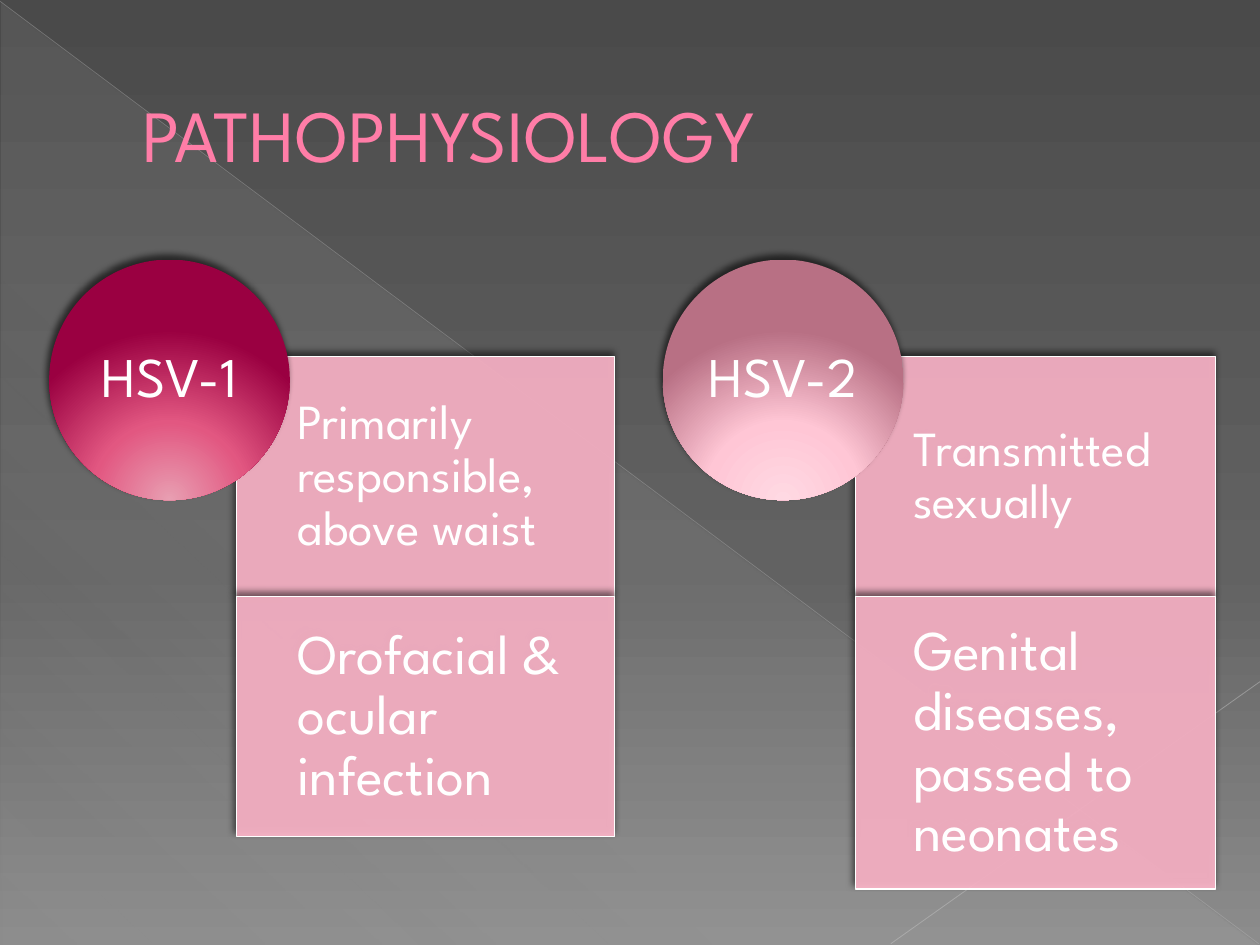
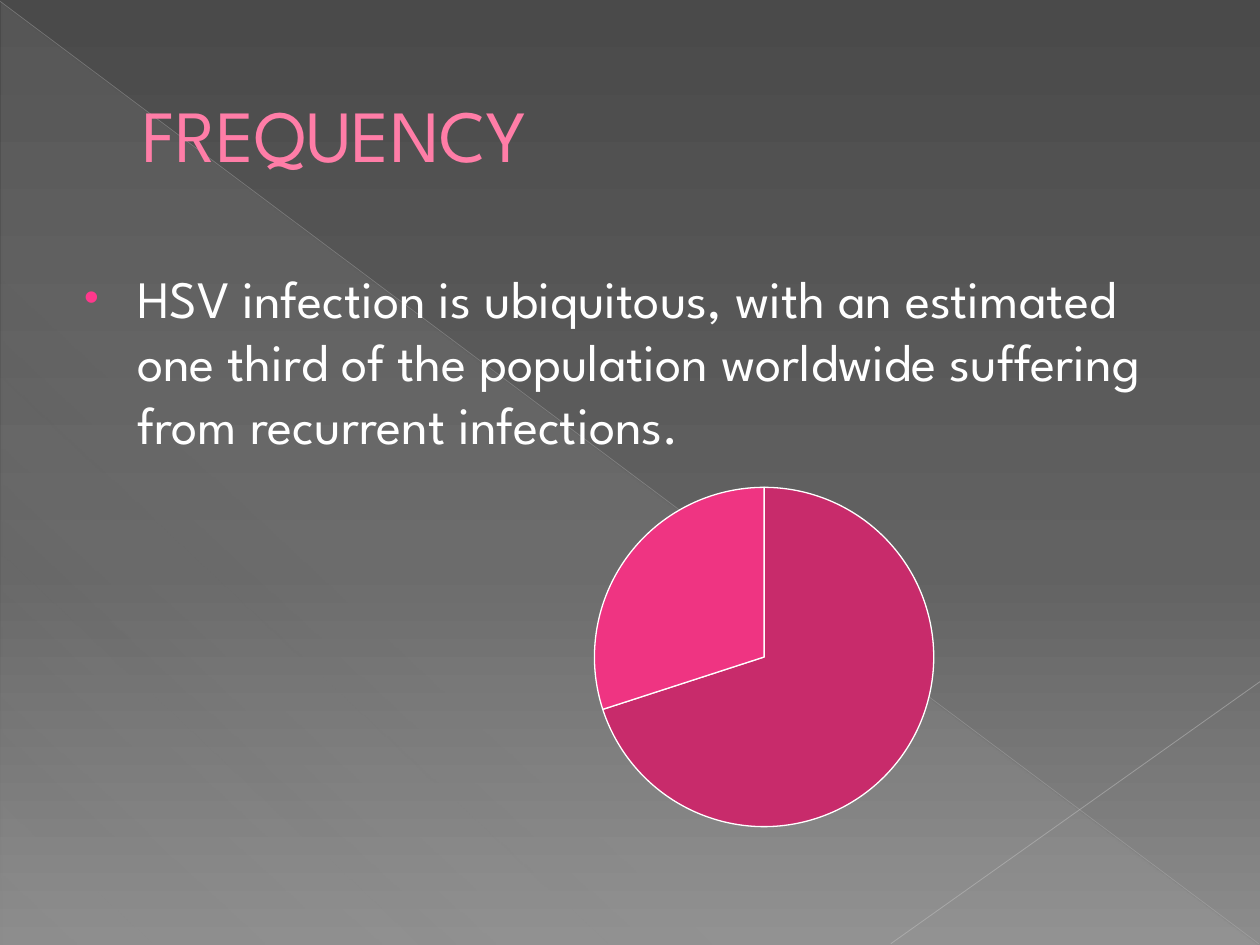
from dataclasses import dataclass

from lxml import etree
from pptx import Presentation
from pptx.chart.data import CategoryChartData
from pptx.dml.color import RGBColor
from pptx.enum.chart import XL_CHART_TYPE
from pptx.enum.shapes import MSO_CONNECTOR, MSO_SHAPE
from pptx.enum.text import MSO_ANCHOR, PP_ALIGN
from pptx.oxml import parse_xml
from pptx.oxml.ns import nsdecls, qn
from pptx.util import Inches, Pt

PIE = XL_CHART_TYPE.PIE
STRAIGHT = MSO_CONNECTOR.STRAIGHT
RECT, OVAL, TRIANGLE = MSO_SHAPE.RECTANGLE, MSO_SHAPE.OVAL, MSO_SHAPE.RIGHT_TRIANGLE
TOP, MIDDLE = MSO_ANCHOR.TOP, MSO_ANCHOR.MIDDLE
LEFT, CENTER = PP_ALIGN.LEFT, PP_ALIGN.CENTER

COLS, ROWS = 100, 75
CELL = Inches(0.1)
BOX_TOP, BOX_H = 28.3, 19.05
CIRCLE_TOP, CIRCLE = 20.6, 19.1


@dataclass(frozen=True)
class Theme:
    """Colours, font and type sizes of the deck."""
    font: str = "League Spartan"
    title: str = "FF7DA7"
    title_edge: str = "B12761"
    text: str = "FFFFFF"
    bullet: str = "FF388C"
    box: str = "FFB7CB"
    backdrop: tuple = ((0, "4A4A4A", 100), (60, "626262", 100), (100, "8C8C8C", 100))
    sheen: tuple = ((0, "D2D2D2", 10), (70, "D2D2D2", 8), (100, "D2D2D2", 1))
    crimson: tuple = ((0, "E89FB2", 100), (46, "E25781", 100), (100, "9A0041", 100))
    blush: tuple = ((0, "FFD9E3", 100), (46, "FFC6D5", 100), (100, "B87084", 100))
    slices: tuple = ("C82B6B", "EF3482")
    title_size: int = 42
    large: int = 32
    body: int = 30
    small: int = 28
    chart: int = 18


T = Theme()


def grid(*cells):
    """Turn grid cells into lengths."""
    return [round(c * CELL) for c in cells]


def rgb(value):
    """Return a colour from its hex value."""
    return RGBColor.from_string(value)


def set_alpha(solid, percent):
    """Make a solid fill element partly transparent."""
    etree.SubElement(solid[0], qn("a:alpha"), val=str(percent * 1000))


def set_gradient(solid, stops, angle=None):
    """Replace a solid fill by a linear gradient, or a radial one without angle."""
    gs = "".join(
        f'<a:gs pos="{pos * 1000}"><a:srgbClr val="{color}">'
        f'<a:alpha val="{alpha * 1000}"/></a:srgbClr></a:gs>'
        for pos, color, alpha in stops)
    if angle is None:
        way = ('<a:path path="circle"><a:fillToRect l="50000" t="155000" '
               'r="50000" b="-55000"/></a:path>')
    else:
        way = f'<a:lin ang="{angle * 60000}" scaled="0"/>'
    fill = parse_xml(f'<a:gradFill {nsdecls("a")} rotWithShape="1">'
                     f'<a:gsLst>{gs}</a:gsLst>{way}</a:gradFill>')
    solid.getparent().replace(solid, fill)


def add_shadow(sp):
    """Give a shape the soft shadow of the panels."""
    sp.shadow.inherit = False
    effects = sp._element.spPr.find(qn("a:effectLst"))
    effects.append(parse_xml(
        f'<a:outerShdw {nsdecls("a")} blurRad="{Pt(4)}" dist="{Pt(3)}" '
        f'dir="{245 * 60000}" rotWithShape="0"><a:srgbClr val="000000">'
        '<a:alpha val="60000"/></a:srgbClr></a:outerShdw>'))


def write(sp, text, size, color=T.text, align=LEFT, anchor=MIDDLE,
          spacing=None, after=None, insets=None):
    """Write one formatted paragraph and return it."""
    tf = sp.text_frame
    tf.word_wrap = True
    tf.vertical_anchor = anchor
    if insets:
        tf.margin_left, tf.margin_top, tf.margin_right, tf.margin_bottom = grid(*insets)
    p = tf.paragraphs[0]
    p.alignment, p.line_spacing, p.space_after = align, spacing, after
    r = p.add_run()
    r.text = text
    r.font.name, r.font.size, r.font.color.rgb = T.font, Pt(size), rgb(color)
    return p


def add_shape(s, kind, *cells):
    """Add a plain shape without line or shadow; return it and its fill element."""
    sp = s.shapes.add_shape(kind, *grid(*cells))
    sp.fill.solid()
    sp.fill.fore_color.rgb = rgb(T.box)
    sp.line.fill.background()
    sp.shadow.inherit = False
    return sp, sp._element.spPr.find(qn("a:solidFill"))


def add_line(s, ends, color, width, alpha):
    """Add a thin translucent line."""
    cx = s.shapes.add_connector(STRAIGHT, *grid(*ends))
    cx.line.color.rgb = rgb(color)
    cx.line.width = Pt(width)
    spPr = cx._element.spPr
    set_alpha(spPr.find(qn("a:ln")).find(qn("a:solidFill")), alpha)
    etree.SubElement(spPr, qn("a:effectLst"))
    return cx


def decorate(prs, s):
    """Put the backdrop, sheen and lines on the master, drawing them through a slide."""
    master = prs.slide_master
    master.background.fill.solid()
    master.background.fill.fore_color.rgb = rgb(T.backdrop[0][1])
    set_gradient(master.element.xpath(".//p:bgPr/a:solidFill")[0], T.backdrop, 90)
    sheen, fill = add_shape(s, TRIANGLE, 0.1, 0.2, COLS - 0.2, ROWS - 0.2)
    set_gradient(fill, T.sheen, 133)
    lines = [add_line(s, (0, 0.1, COLS - 0.1, ROWS - 0.1), "BFBFBF", 0.39, 35),
             add_line(s, (COLS, 54.1, 70.7, ROWS - 0.1), "C6C6C6", 0.47, 45)]
    for sp in (sheen, *lines):
        master.shapes._spTree.append(sp._element)


def add_slide(prs, title):
    """Add a slide with its formatted title."""
    s = prs.slides.add_slide(prs.slide_layouts[5])
    sp = s.shapes.title
    sp.left, sp.top, sp.width, sp.height = grid(5, 2.9, 90, 15.3)
    p = write(sp, title, T.title_size, T.title)
    p._p.get_or_add_pPr().set("marL", str(Inches(0.53)))
    p.runs[0].font._element.insert(0, parse_xml(
        f'<a:ln {nsdecls("a")} w="{Pt(0.5)}"><a:solidFill>'
        f'<a:srgbClr val="{T.title_edge}"/></a:solidFill></a:ln>'))
    return s


def add_box(s, text, size, inset, *cells):
    """Add a translucent pink box with its text beside the circle."""
    sp, fill = add_shape(s, RECT, *cells)
    set_alpha(fill, 90)
    sp.line.color.rgb = rgb(T.text)
    sp.line.width = Pt(0.75)
    add_shadow(sp)
    write(sp, text, size, spacing=0.9, after=Pt(size * 0.35),
          insets=(0.16 * cells[2], inset, inset, inset))


def add_panel(s, name, stops, circle_left, box_left, box_w, cause, disease, last_h):
    """Add a virus type: two stacked boxes and a circle over their corner."""
    add_box(s, cause, T.small, 2.2, box_left, BOX_TOP, box_w, BOX_H)
    add_box(s, disease, T.large, 2.5, box_left, BOX_TOP + BOX_H, box_w, last_h)
    sp, fill = add_shape(s, OVAL, circle_left, CIRCLE_TOP, CIRCLE, CIRCLE)
    set_gradient(fill, stops)
    add_shadow(sp)
    write(sp, name, T.large, align=CENTER, spacing=0.9, insets=(0, 0, 0, 0))


def add_bullet(s, text, *cells):
    """Add a bulleted paragraph."""
    sp = s.shapes.add_textbox(*grid(*cells))
    p = write(sp, text, T.body, anchor=TOP)
    p.space_before = Pt(T.body * 0.2)
    pPr = p._p.get_or_add_pPr()
    pPr.set("marL", str(Inches(0.49)))
    pPr.set("indent", str(Inches(-0.42)))
    color = etree.SubElement(pPr, qn("a:buClr"))
    etree.SubElement(color, qn("a:srgbClr"), val=T.bullet)
    etree.SubElement(pPr, qn("a:buSzPct"), val="80000")
    etree.SubElement(pPr, qn("a:buFont"), typeface="Arial")
    etree.SubElement(pPr, qn("a:buChar"), char="•")


def add_pie(s, values, *cells):
    """Add a pie chart without title or legend."""
    data = CategoryChartData()
    data.categories = [str(i + 1) for i in range(len(values))]
    data.add_series("Series 1", values)
    chart = s.shapes.add_chart(PIE, *grid(*cells), data).chart
    chart.has_title = chart.has_legend = False
    chart.font.name, chart.font.size = T.font, Pt(T.chart)
    chart.font.color.rgb = rgb(T.text)
    plot = chart.plots[0]
    plot.vary_by_categories = True
    for i, color in enumerate(T.slices):
        fmt = plot.series[0].points[i].format
        fmt.fill.solid()
        fmt.fill.fore_color.rgb = rgb(color)
        fmt.line.color.rgb = rgb(T.text)
        fmt.line.width = Pt(0.75)
    area = chart._chartSpace.chart.plotArea
    for old in area.findall(qn("c:layout")):
        area.remove(old)
    area.insert(0, parse_xml(
        f'<c:layout {nsdecls("c")}><c:manualLayout><c:layoutTarget val="inner"/>'
        '<c:xMode val="edge"/><c:yMode val="edge"/><c:x val="0.08"/><c:y val="0.04"/>'
        '<c:w val="0.84"/><c:h val="0.91"/></c:manualLayout></c:layout>'))


def main():
    """Build the two slides."""
    prs = Presentation()
    prs.slide_width, prs.slide_height = grid(COLS, ROWS)

    s = add_slide(prs, "PATHOPHYSIOLOGY")
    decorate(prs, s)
    add_panel(s, "HSV-1", T.crimson, 3.9, 18.8, 30,
              "Primarily responsible, above waist", "Orofacial & ocular infection", BOX_H)
    add_panel(s, "HSV-2", T.blush, 52.6, 67.9, 28.6,
              "Transmitted sexually", "Genital diseases, passed to neonates", 23.2)

    s = add_slide(prs, "FREQUENCY")
    add_bullet(s, "HSV infection is ubiquitous, with an estimated one third of the "
                  "population worldwide suffering from recurrent infections.",
               5, 20.6, 90, 50)
    add_pie(s, (70, 30), 44.5, 37.5, 32.3, 29.6)

    prs.save("out.pptx")


if __name__ == "__main__":
    main()
